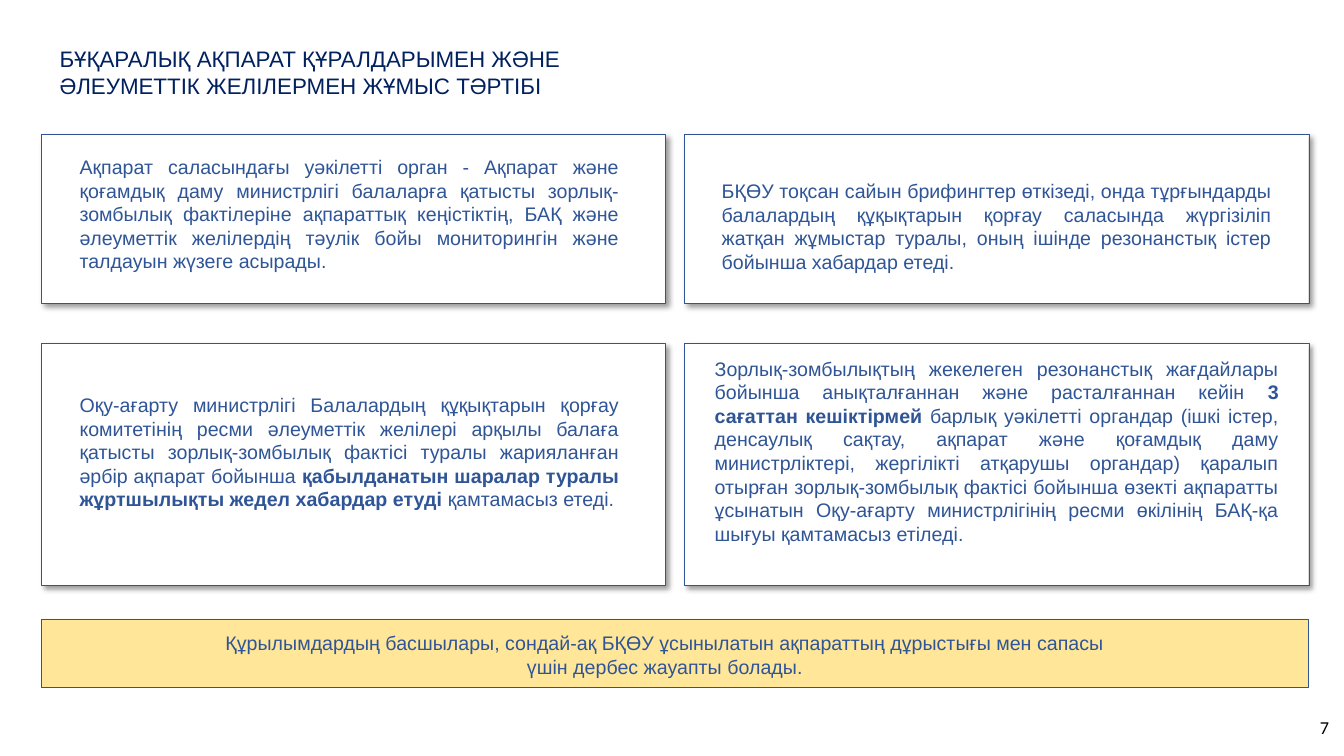
import pptx
import pptx.util
import pptx.dml.color
import pptx.enum.shapes
import pptx.enum.text
import lxml.etree

Inches = pptx.util.Inches
Align = pptx.enum.text.PP_ALIGN
Anchor = pptx.enum.text.MSO_ANCHOR

COLORS = {
    "navy": "002060",
    "blue": "2F5597",
    "gold": "FFE699",
    "white": "FFFFFF",
    "black": "000000",
}

SHADOW = """<a:outerShdw
  xmlns:a="http://schemas.openxmlformats.org/drawingml/2006/main"
  blurRad="50800" dist="38100" dir="2700000" algn="tl" rotWithShape="0">
  <a:srgbClr val="000000"><a:alpha val="40000"/></a:srgbClr>
</a:outerShdw>"""

LEFTS = (0.41, 6.79)
ROWS = ((1.33, 1.68), (3.41, 2.4))

NOTES = [
    ((0.69, 1.49, 5.55, 1.28), [
        "Ақпарат саласындағы уәкілетті орган - Ақпарат және қоғамдық даму "
        "министрлігі балаларға қатысты зорлық-зомбылық фактілеріне ақпараттық "
        "кеңістіктің, БАҚ және әлеуметтік желілердің тәулік бойы мониторингін "
        "және талдауын жүзеге асырады."]),
    ((7.06, 1.73, 5.65, 1.04), [
        "БҚӨУ тоқсан сайын брифингтер өткізеді, онда тұрғындарды балалардың "
        "құқықтарын қорғау саласында жүргізіліп жатқан жұмыстар туралы, оның "
        "ішінде резонанстық істер бойынша хабардар етеді."]),
    ((0.69, 3.85, 5.55, 1.28), [
        "Оқу-ағарту министрлігі Балалардың құқықтарын қорғау комитетінің ресми "
        "әлеуметтік желілері арқылы балаға қатысты зорлық-зомбылық фактісі "
        "туралы жарияланған әрбір ақпарат бойынша ",
        "қабылданатын шаралар туралы жұртшылықты жедел хабардар етуді",
        " қамтамасыз етеді."]),
    ((6.99, 3.49, 5.79, 1.99), [
        "Зорлық-зомбылықтың жекелеген резонанстық жағдайлары бойынша "
        "анықталғаннан және расталғаннан кейін ",
        "3 сағаттан кешіктірмей",
        " барлық уәкілетті органдар (ішкі істер, денсаулық сақтау, ақпарат және "
        "қоғамдық даму министрліктері, жергілікті атқарушы органдар) қаралып "
        "отырған зорлық-зомбылық фактісі бойынша өзекті ақпаратты ұсынатын "
        "Оқу-ағарту министрлігінің ресми өкілінің БАҚ-қа шығуы қамтамасыз "
        "етіледі."]),
]


def paint(name):
    return pptx.dml.color.RGBColor.from_string(COLORS[name])


def write(frame, text, size=14, font="Arial", color="blue",
          align=Align.LEFT, anchor=Anchor.TOP):
    frame.word_wrap = True
    frame.auto_size = pptx.enum.text.MSO_AUTO_SIZE.NONE
    frame.vertical_anchor = anchor
    frame.margin_left = frame.margin_right = Inches(0.1)
    frame.margin_top = frame.margin_bottom = Inches(0.05)
    for index, parts in enumerate(text):
        para = frame.paragraphs[0] if index == 0 else frame.add_paragraph()
        para.alignment = align
        for order, part in enumerate(parts):
            run = para.add_run()
            run.text = part
            run.font.size = pptx.util.Pt(size)
            run.font.name = font
            run.font.bold = order % 2 == 1
            run.font.color.rgb = paint(color)


def add_text(slide, place, text, **style):
    box = slide.shapes.add_textbox(*map(Inches, place))
    write(box.text_frame, text, **style)


def add_title(slide, place, lines):
    title = slide.shapes.title
    title.left, title.top, title.width, title.height = map(Inches, place)
    write(title.text_frame, [[line] for line in lines], size=16, color="navy")


def add_panel(slide, place, fill="white", shadow=True):
    panel = slide.shapes.add_shape(
        pptx.enum.shapes.MSO_SHAPE.RECTANGLE, *map(Inches, place))
    panel.fill.solid()
    panel.fill.fore_color.rgb = paint(fill)
    panel.line.color.rgb = paint("blue")
    panel.line.width = pptx.util.Pt(0.25)
    panel.shadow.inherit = False
    if shadow:
        effects = panel.element.spPr.find(pptx.oxml.ns.qn("a:effectLst"))
        effects.append(lxml.etree.fromstring(SHADOW))


def main():
    deck = pptx.Presentation()
    deck.slide_width = Inches(13.33)
    deck.slide_height = Inches(7.5)
    slide = deck.slides.add_slide(deck.slide_layouts[5])

    add_title(slide, (0.49, 0.4, 8.85, 0.64), [
        "БҰҚАРАЛЫҚ АҚПАРАТ ҚҰРАЛДАРЫМЕН ЖӘНЕ",
        "ӘЛЕУМЕТТІК ЖЕЛІЛЕРМЕН ЖҰМЫС ТӘРТІБІ"])
    for top, height in ROWS:
        for left in LEFTS:
            add_panel(slide, (left, top, 6.19, height))
    for place, parts in NOTES:
        add_text(slide, place, [parts], align=Align.JUSTIFY)

    add_panel(slide, (0.41, 6.14, 12.57, 0.68), fill="gold", shadow=False)
    add_text(slide, (2.06, 6.21, 9.07, 0.57), [[
        "Құрылымдардың басшылары, сондай-ақ БҚӨУ ұсынылатын ақпараттың "
        "дұрыстығы мен сапасы үшін дербес жауапты болады."]],
        align=Align.CENTER)
    add_text(slide, (12.48, 6.93, 0.8, 0.57), [["7"]], size=13,
             font="Calibri", color="black", align=Align.RIGHT,
             anchor=Anchor.MIDDLE)
    deck.save("out.pptx")


if __name__ == "__main__":
    main()
